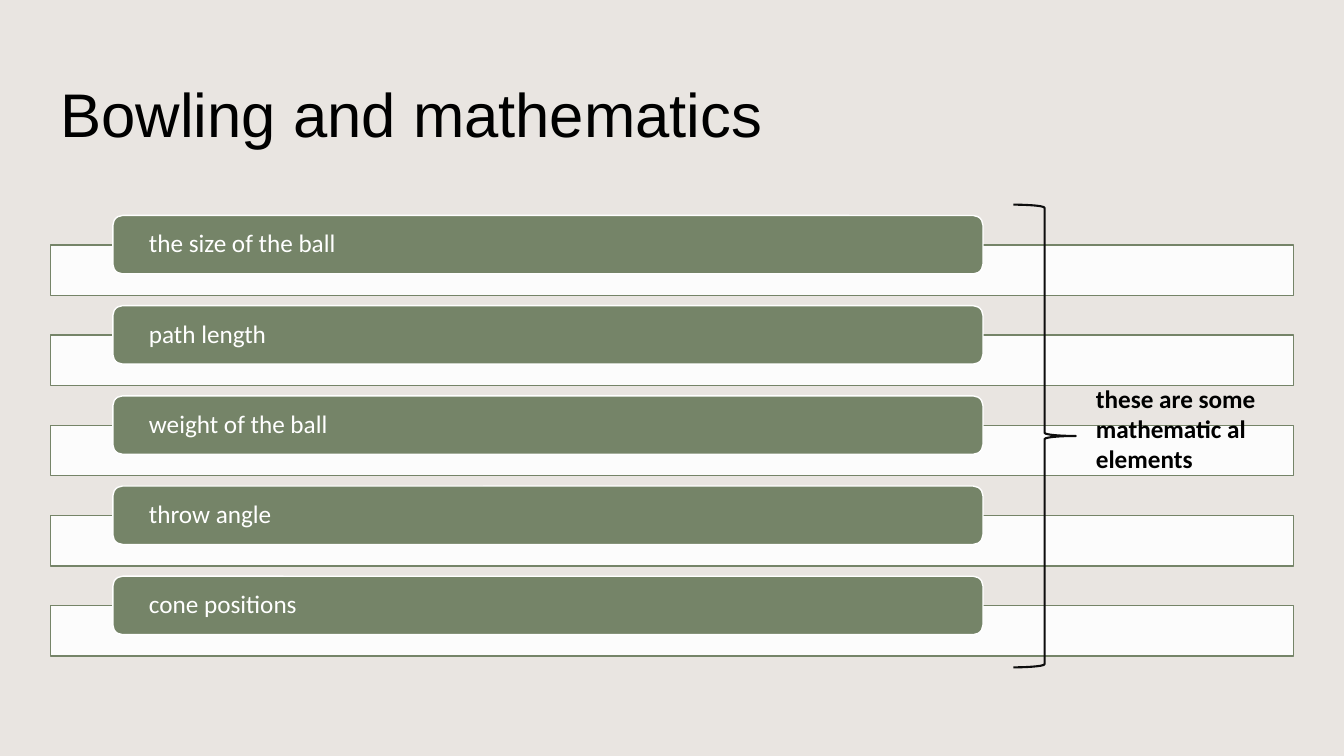
from lxml.etree import SubElement
from pptx import Presentation
from pptx.dml.color import RGBColor
from pptx.enum.shapes import MSO_SHAPE
from pptx.enum.text import MSO_ANCHOR, MSO_AUTO_SIZE, PP_ALIGN
from pptx.oxml.ns import qn
from pptx.util import Inches, Pt

SAND = RGBColor(0xE9, 0xE5, 0xE1)
SAGE = RGBColor(0x75, 0x84, 0x68)
WHITE = RGBColor(0xFF, 0xFF, 0xFF)
BLACK = RGBColor(0x00, 0x00, 0x00)
INK = RGBColor(0x0D, 0x0D, 0x0D)

ITEMS = ["the size of the ball", "path length", "weight of the ball",
         "throw angle", "cone positions"]
PITCH = 11.93  # row step, percent of slide height


class Deck:
    """Holds the style and the current slide; boxes are percents of its size."""

    title_font = {"name": "Arial", "size": Pt(44)}
    body_font = {"name": "Calibri", "size": Pt(18)}
    note_font = {**body_font, "bold": True}
    row_frame = {"vertical_anchor": MSO_ANCHOR.MIDDLE, "word_wrap": True,
                 "margin_left": Inches(0.33), "margin_right": Inches(0.33),
                 "margin_top": 0, "margin_bottom": 0}

    def __init__(self):
        self.prs = Presentation()
        self.prs.slide_width = Inches(13.33)
        self.prs.slide_height = Inches(7.5)
        self.slide = self.prs.slides.add_slide(self.prs.slide_layouts[5])
        fill = self.slide.background.fill
        fill.solid()
        fill.fore_color.rgb = SAND

    def place(self, left, top, width, height):
        wide, high = self.prs.slide_width, self.prs.slide_height
        return [int(part * side / 100) for part, side in
                zip((left, top, width, height), (wide, high, wide, high))]

    def style(self, item, values):
        for key, value in values.items():
            setattr(item, key, value)

    def label(self, frame, text, font, color, values, spacing=1.0):
        self.style(frame, values)
        para = frame.paragraphs[0]
        self.style(para, {"alignment": PP_ALIGN.LEFT, "line_spacing": spacing})
        run = para.add_run()
        run.text = text
        self.style(run.font, font)
        run.font.color.rgb = color

    def title(self, text, box):
        shape = self.slide.shapes.title
        self.style(shape, dict(zip(("left", "top", "width", "height"),
                                   self.place(*box))))
        self.label(shape.text_frame, text, self.title_font, BLACK,
                   {"vertical_anchor": MSO_ANCHOR.MIDDLE, "word_wrap": True,
                    "auto_size": MSO_AUTO_SIZE.NONE})

    def shape(self, kind, box, line, weight=1, fill=None, alpha=None):
        shape = self.slide.shapes.add_shape(kind, *self.place(*box))
        shape.shadow.inherit = False
        shape.line.width = Pt(weight)
        shape.line.color.rgb = line
        if fill is None:
            shape.fill.background()
        else:
            shape.fill.solid()
            shape.fill.fore_color.rgb = fill
        if alpha is not None:
            tint = shape.element.spPr.find(qn("a:solidFill"))[0]
            SubElement(tint, qn("a:alpha"), val=str(alpha * 1000))
        return shape

    def row(self, text, step):
        self.shape(MSO_SHAPE.RECTANGLE, (3.75, 32.4 + step, 92.5, 6.67),
                   SAGE, fill=WHITE, alpha=90)
        pill = self.shape(MSO_SHAPE.ROUNDED_RECTANGLE,
                          (8.4, 28.5 + step, 64.74, 7.73), WHITE, fill=SAGE)
        self.label(pill.text_frame, text, self.body_font, WHITE,
                   self.row_frame, 0.9)

    def brace(self, box):
        shape = self.shape(MSO_SHAPE.RIGHT_BRACE, box, INK, 1.5)
        shape.adjustments[0] = 0.05
        shape.adjustments[1] = 0.5

    def note(self, text, box):
        shape = self.slide.shapes.add_textbox(*self.place(*box))
        self.label(shape.text_frame, text, self.note_font, BLACK,
                   {"word_wrap": True})


def main():
    deck = Deck()
    deck.title("Bowling and mathematics", (3.75, 5.33, 89.4, 19.33))

    # Rows of elements
    for index, item in enumerate(ITEMS):
        deck.row(item, index * PITCH)

    # Brace and its remark
    deck.brace((75.4, 27.07, 4.65, 61.2))
    deck.note("these are some mathematic al elements", (80.8, 50, 14.7, 21.6))

    deck.prs.save("out.pptx")


if __name__ == "__main__":
    main()
